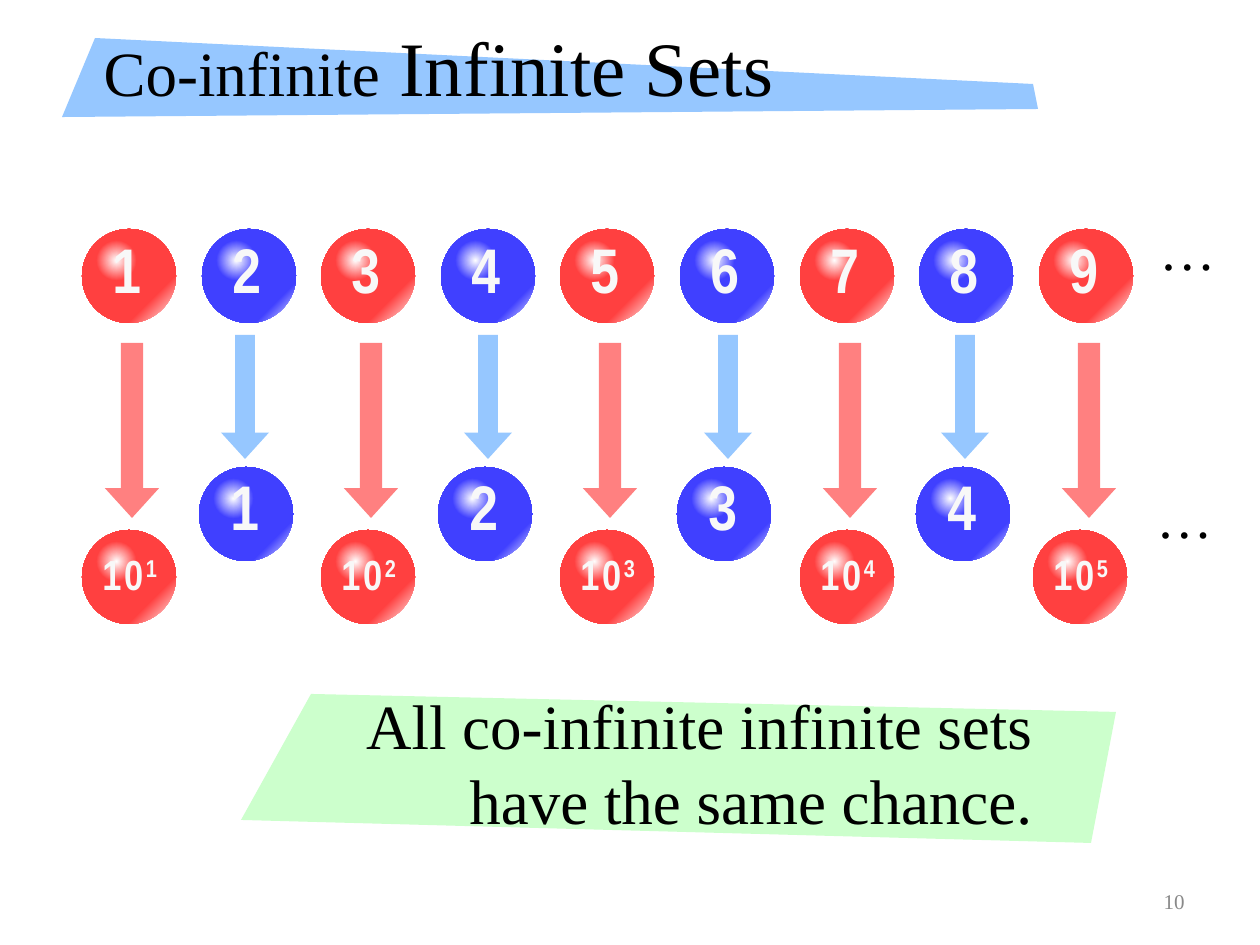
from dataclasses import dataclass

from pptx import Presentation
from pptx.dml.color import RGBColor
from pptx.enum.shapes import MSO_SHAPE
from pptx.enum.text import MSO_ANCHOR, PP_ALIGN
from pptx.oxml import parse_xml
from pptx.util import Pt

PX = 914400 / 126
NS = "http://schemas.openxmlformats.org/drawingml/2006/main"


@dataclass(frozen=True)
class Theme:
    serif: str = "Times New Roman"
    narrow: str = "Arial Narrow"
    ink: str = "000000"
    muted: str = "898989"
    digit: str = "F8F8F8"
    white: str = "FFFFFF"
    red: str = "FF4040"
    blue: str = "4040FF"
    red_arrow: str = "FF8080"
    blue_arrow: str = "96C7FF"
    green: str = "CCFFCC"
    title: int = 44
    large: int = 36
    dots: int = 32
    power: int = 24
    small: int = 12


def emu(*lengths):
    return [round(n * PX) for n in lengths]


def add_text(p, text, size, font, color, bold=False, spacing=0, raised=False):
    r = p.add_run()
    r.text = text
    r.font.size = Pt(size)
    r.font.name = font
    r.font.bold = bold
    r.font.color.rgb = RGBColor.from_string(color)
    if spacing:
        r.font._element.set("spc", str(spacing))
    if raised:
        r.font._element.set("baseline", "30000")
    return r


class Deck:
    def __init__(self, theme):
        self.theme = theme
        self.prs = Presentation()
        self.prs.slide_width, self.prs.slide_height = emu(1260, 945)
        self.s = self.prs.slides.add_slide(self.prs.slide_layouts[5])

    def paint(self, sp, color):
        sp.shadow.inherit = False
        sp.line.fill.background()
        sp.fill.solid()
        sp.fill.fore_color.rgb = RGBColor.from_string(color)

    def title(self, box, parts):
        sp = self.s.shapes.title
        sp._element.getparent().append(sp._element)
        sp.left, sp.top, sp.width, sp.height = emu(*box)
        tf = sp.text_frame
        tf.vertical_anchor = MSO_ANCHOR.MIDDLE
        p = tf.paragraphs[0]
        p.alignment = PP_ALIGN.LEFT
        for text, size in parts:
            add_text(p, text, size, self.theme.serif, self.theme.ink)

    def banner(self, points, color):
        start, *rest = points
        builder = self.s.shapes.build_freeform(*start, scale=PX)
        builder.add_line_segments(rest, close=True)
        self.paint(builder.convert_to_shape(), color)

    def text(self, box, text, size, font=None, color=None, align=PP_ALIGN.LEFT,
             wrap=True, anchor=MSO_ANCHOR.TOP, power="", **style):
        tf = self.s.shapes.add_textbox(*emu(*box)).text_frame
        tf.word_wrap = wrap
        tf.vertical_anchor = anchor
        p = tf.paragraphs[0]
        p.alignment = align
        font, color = font or self.theme.serif, color or self.theme.ink
        add_text(p, text, size, font, color, **style)
        if power:
            add_text(p, power, size, font, color, raised=True, **style)

    def label(self, box, text, size, power=""):
        self.text(box, text, size, self.theme.narrow, self.theme.digit,
                  power=power, bold=True, spacing=150)

    def disc(self, x, y, size, stops, focus):
        sp = self.s.shapes.add_shape(MSO_SHAPE.OVAL, *emu(x, y, size, size))
        self.paint(sp, stops[0][1])
        marks = "".join(
            f'<a:gs pos="{pos * 1000}"><a:srgbClr val="{color}"/></a:gs>'
            for pos, color in stops)
        left, right = focus * 1000, (100 - focus) * 1000
        grad = parse_xml(
            f'<a:gradFill xmlns:a="{NS}" rotWithShape="1"><a:gsLst>{marks}</a:gsLst>'
            f'<a:path path="circle"><a:fillToRect l="{left}" t="{left}" '
            f'r="{right}" b="{right}"/></a:path></a:gradFill>')
        solid = sp._element.spPr.find(f"{{{NS}}}solidFill")
        solid.getparent().replace(solid, grad)

    def ball(self, x, y, color):
        white = self.theme.white
        edge = 74 if color == self.theme.red else 78
        self.disc(x, y, 94, [(0, color), (edge, color), (100, white)], 0)
        self.disc(x + 12, y + 9, 45, [(0, white), (64, color), (100, color)], 50)

    def down_arrow(self, center, top, length, breadth, color):
        box = (center - length / 2, top + (length - breadth) / 2, length, breadth)
        sp = self.s.shapes.add_shape(MSO_SHAPE.RIGHT_ARROW, *emu(*box))
        sp.rotation = 90
        sp.adjustments[0], sp.adjustments[1] = 0.41, 0.55
        self.paint(sp, color)


def main():
    t = Theme()
    deck = Deck(t)

    deck.banner([(95, 38), (1033, 84), (1038, 109), (62, 117)], t.blue_arrow)
    deck.title((91, -4, 1104, 139),
               [("Co-infinite", t.large), (" Infinite Sets", t.title)])
    deck.text((903, 876, 294, 50), "10", t.small, color=t.muted,
              align=PP_ALIGN.RIGHT, anchor=MSO_ANCHOR.MIDDLE)

    columns = [82 + round(119.6 * i) for i in range(9)]
    for number, x in enumerate(columns, 1):
        deck.ball(x, 229, t.red if number % 2 else t.blue)
        deck.label((x + 18, 224, 69, 89), str(number), t.large)

    blue_centers = (245, 488, 728, 965)
    for number, (x, center) in enumerate(zip(columns[1::2], blue_centers), 1):
        deck.down_arrow(center, 335, 124, 48, t.blue_arrow)
        deck.ball(x - 3, 467, t.blue)
        deck.label((x + 16, 461, 69, 89), str(number), t.large)

    red_balls = columns[:8:2] + [1033]
    for power, (x, column) in enumerate(zip(red_balls, columns[::2]), 1):
        deck.down_arrow(column + 50, 343, 175, 54, t.red_arrow)
        deck.ball(x, 530, t.red)
        deck.label((x + 8, 542, 100, 63), "10", t.power, power=str(power))

    for x, y in ((1147, 208), (1144, 476)):
        deck.text((x, y, 82, 81), "…", t.dots, wrap=False)

    deck.banner([(311, 694), (1116, 712), (1091, 843), (241, 820)], t.green)
    deck.text((334, 680, 711, 165),
              "All co-infinite infinite sets have the same chance.",
              t.large, align=PP_ALIGN.RIGHT)

    deck.prs.save("out.pptx")


if __name__ == "__main__":
    main()
